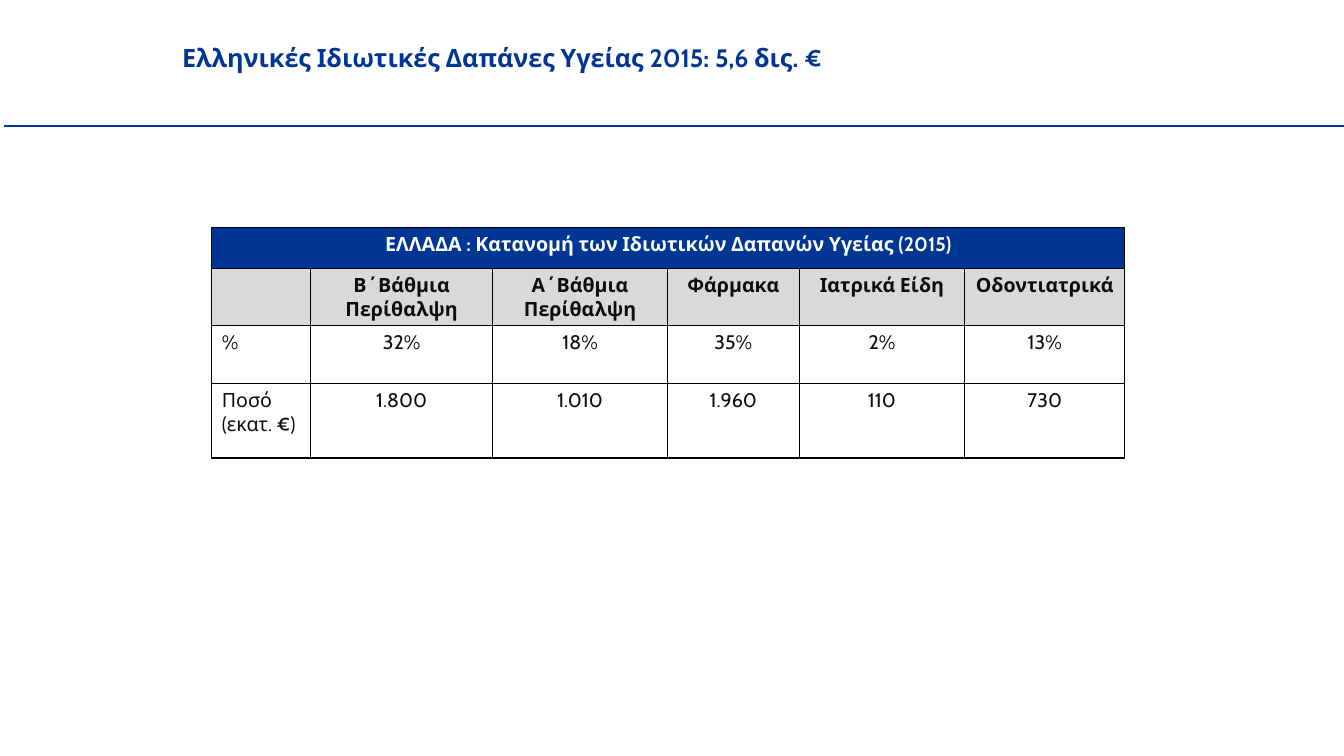
from lxml import etree
from pptx import Presentation
from pptx.dml.color import RGBColor
from pptx.enum.shapes import MSO_CONNECTOR
from pptx.enum.text import PP_ALIGN
from pptx.oxml import parse_xml
from pptx.oxml.ns import qn
from pptx.util import Pt

STRAIGHT = MSO_CONNECTOR.STRAIGHT
LEFT, CENTER = PP_ALIGN.LEFT, PP_ALIGN.CENTER

NAVY = RGBColor(0x00, 0x36, 0x93)
GREY = RGBColor(0xD9, 0xD9, 0xD9)
INK = RGBColor(0x0D, 0x0D, 0x0D)
WHITE = RGBColor(0xFF, 0xFF, 0xFF)
BLACK = RGBColor(0x00, 0x00, 0x00)

FONT = "Cabin"
TITLE = "Ελληνικές Ιδιωτικές Δαπάνες Υγείας 2015: 5,6 δις. €"
BANNER = "ΕΛΛΑΔΑ : Κατανομή των Ιδιωτικών Δαπανών Υγείας (2015)"
HEADS = ["", "Β΄Βάθμια Περίθαλψη", "Α΄Βάθμια Περίθαλψη", "Φάρμακα",
         "Ιατρικά Είδη", "Οδοντιατρικά"]
BODY = [
    ["%", "32%", "18%", "35%", "2%", "13%"],
    ["Ποσό\n(εκατ. €)", "1.800", "1.010", "1.960", "110", "730"],
]
WIDTHS = [70.6, 130.3, 124.6, 94.3, 118.1, 114.5]
HEIGHTS = [29, 41, 41, 53.5]


def write(frame, text, size=14, color=INK, bold=False, align=LEFT):
    """Fill a text frame with one formatted paragraph."""
    frame.word_wrap = True
    para = frame.paragraphs[0]
    para.text = text
    para.alignment = align
    for run in para.runs:
        font = run.font
        font.name, font.size, font.bold = FONT, Pt(size), bold
        font.color.rgb = color


def add_title(slide):
    box = slide.shapes.add_textbox(Pt(123), Pt(26.6), Pt(674), Pt(50.4))
    write(box.text_frame, TITLE, size=18, color=NAVY, bold=True)


def add_rule(slide):
    rule = slide.shapes.add_connector(STRAIGHT, Pt(3), Pt(90), Pt(960), Pt(90))
    rule.line.color.rgb = NAVY
    rule.line.width = Pt(1.5)
    etree.SubElement(rule._element.spPr, qn("a:effectLst"))


def add_edges(cell, color=BLACK, width=0.96):
    """Draw all four borders of a cell."""
    props = cell._tc.get_or_add_tcPr()
    for spot, side in enumerate("LRTB"):
        props.insert(spot, parse_xml(
            f'<a:ln{side} xmlns:a="http://schemas.openxmlformats.org/'
            f'drawingml/2006/main" w="{Pt(width)}"><a:solidFill>'
            f'<a:srgbClr val="{color}"/></a:solidFill></a:ln{side}>'))


def set_cell(cell, text, fill=None, **style):
    if fill is None:
        cell.fill.background()
    else:
        cell.fill.solid()
        cell.fill.fore_color.rgb = fill
    add_edges(cell)
    write(cell.text_frame, text, **style)


def add_costs(slide):
    table = slide.shapes.add_table(
        len(HEIGHTS), len(WIDTHS), Pt(151.2), Pt(162.7),
        Pt(sum(WIDTHS)), Pt(sum(HEIGHTS))).table
    for col, width in zip(table.columns, WIDTHS):
        col.width = Pt(width)
    for row, height in zip(table.rows, HEIGHTS):
        row.height = Pt(height)

    # Banner across all columns
    table.cell(0, 0).merge(table.cell(0, len(WIDTHS) - 1))
    for col in range(len(WIDTHS)):
        set_cell(table.cell(0, col), "" if col else BANNER, fill=NAVY,
                 color=WHITE, bold=True, align=CENTER)

    # Column heads
    for col, head in enumerate(HEADS):
        set_cell(table.cell(1, col), head, fill=GREY, bold=True, align=CENTER)

    # Values
    for row, values in enumerate(BODY, start=2):
        for col, value in enumerate(values):
            set_cell(table.cell(row, col), value,
                     align=CENTER if col else LEFT)


def main():
    deck = Presentation()
    deck.slide_width, deck.slide_height = Pt(960), Pt(540)
    slide = deck.slides.add_slide(deck.slide_layouts[6])
    add_rule(slide)
    add_title(slide)
    add_costs(slide)
    deck.save("out.pptx")


if __name__ == "__main__":
    main()
